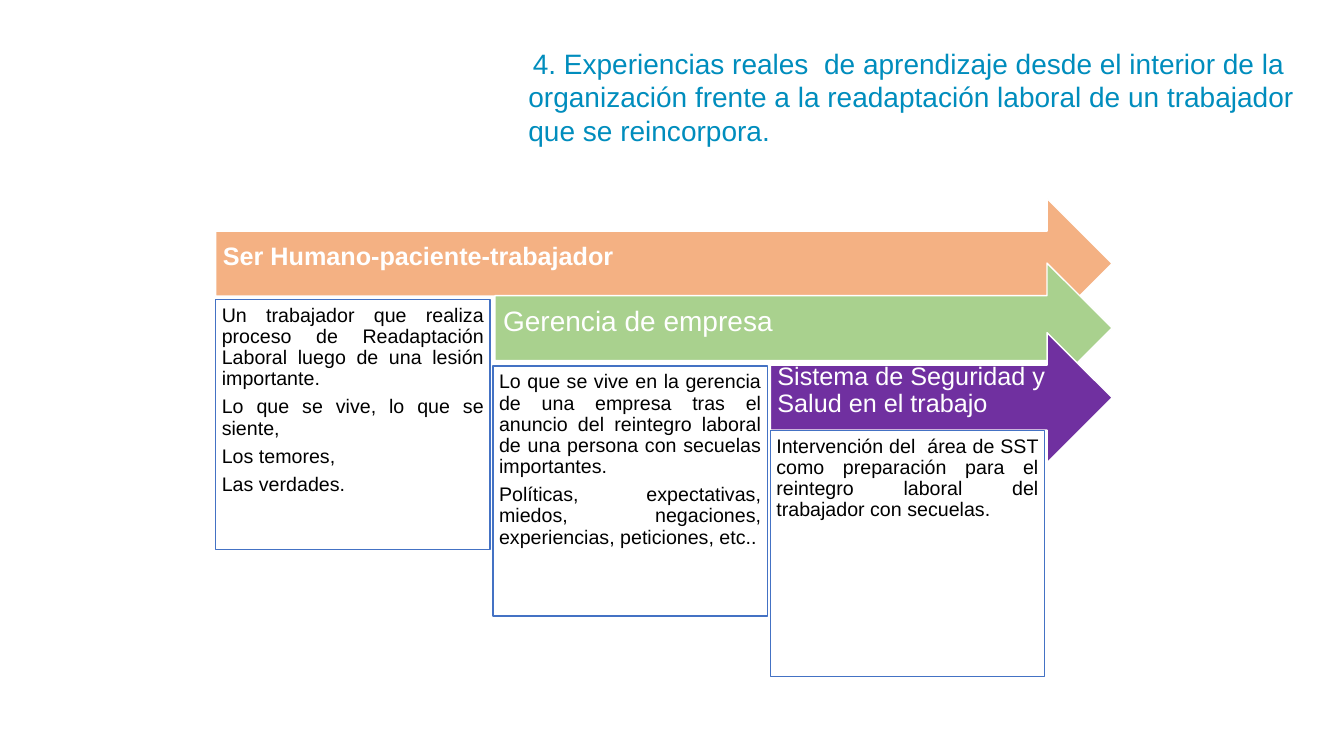
from pptx import Presentation
from pptx.dml.color import RGBColor
from pptx.enum.shapes import MSO_SHAPE
from pptx.enum.text import MSO_ANCHOR, MSO_AUTO_SIZE, PP_ALIGN
from pptx.util import Inches, Pt

ARROW, RECT = MSO_SHAPE.RIGHT_ARROW, MSO_SHAPE.RECTANGLE
TOP, MIDDLE = MSO_ANCHOR.TOP, MSO_ANCHOR.MIDDLE
LEFT, JUSTIFY = PP_ALIGN.LEFT, PP_ALIGN.JUSTIFY
GROW = MSO_AUTO_SIZE.SHAPE_TO_FIT_TEXT

TITLE = ("4. Experiencias reales  de aprendizaje desde el interior de la "
         "organización frente a la readaptación laboral de un trabajador "
         "que se reincorpora.")
TIP = 11.03

STAGES = [
    dict(head="Ser Humano-paciente-trabajador", size=18, bold=True,
         fill="F4B183", arrow=(2.14, 1.97), box=(2.14, 2.97, 2.72, 2.48), pad=0.07,
         body=["Un trabajador que realiza proceso de Readaptación Laboral "
               "luego de una lesión importante.",
               "Lo que se vive, lo que se siente,",
               "Los temores,",
               "Las verdades."]),
    dict(head="Gerencia de empresa", size=20, bold=False,
         fill="A9D18E", arrow=(4.91, 2.61), box=(4.89, 3.63, 2.72, 2.48), pad=0.08,
         body=["Lo que se vive en la gerencia de una empresa tras el anuncio "
               "del reintegro laboral de una persona con secuelas importantes.",
               "Políticas, expectativas, miedos, negaciones, experiencias, "
               "peticiones, etc.."]),
    dict(head="Sistema de Seguridad y Salud en el trabajo", size=18, bold=False,
         fill="7030A0", arrow=(7.64, 3.3), box=(7.64, 4.27, 2.72, 2.44), pad=0.07,
         body=["Intervención del  área de SST como preparación para el "
               "reintegro laboral del trabajador con secuelas."]),
]


def color(code):
    return RGBColor.from_string(code)


def write(para, text, size=14, font="Arial", ink="000000", bold=False,
          align=LEFT, lines=0.9, after=0.35):
    para.alignment = align
    para.line_spacing = lines
    para.space_before = Pt(0)
    para.space_after = Pt(size * after)
    run = para.add_run()
    run.text = text
    run.font.size = Pt(size)
    run.font.name = font
    run.font.bold = bold
    run.font.color.rgb = color(ink)


class Deck:
    line = "4472C4"
    white = "FFFFFF"
    accent = "008DBD"

    def __init__(self):
        self.file = Presentation()
        self.file.slide_width = Inches(13.33)
        self.file.slide_height = Inches(7.5)
        self.slide = self.file.slides.add_slide(self.file.slide_layouts[5])

    def frame(self, shape, pads, anchor):
        frame = shape.text_frame
        frame.word_wrap = True
        frame.vertical_anchor = anchor
        (frame.margin_left, frame.margin_top,
         frame.margin_right, frame.margin_bottom) = map(Inches, pads)
        return frame

    def title(self, text, left, top, width, height):
        shape = self.slide.shapes.title
        shape.left, shape.top = Inches(left), Inches(top)
        shape.width, shape.height = Inches(width), Inches(height)
        frame = self.frame(shape, (0.1, 0.05, 0.1, 0.05), TOP)
        frame.auto_size = GROW
        para = frame.paragraphs[0]
        write(para, " ", font="Calibri", lines=1.0, after=0)
        write(para, text, size=20, ink=self.accent, lines=1.0, after=0)

    def shape(self, kind, place, fill, line):
        shape = self.slide.shapes.add_shape(kind, *map(Inches, place))
        shape.shadow.inherit = False
        shape.fill.solid()
        shape.fill.fore_color.rgb = color(fill)
        shape.line.color.rgb = color(line)
        shape.line.width = Pt(1)
        return shape

    def arrow(self, text, left, top, fill, pad, **style):
        place = (left, top, TIP - left, 1.29)
        shape = self.shape(ARROW, place, fill, self.white)
        frame = self.frame(shape, (pad, pad, 0.28, 0.2), MIDDLE)
        write(frame.paragraphs[0], text, ink=self.white, **style)

    def box(self, texts, place):
        shape = self.shape(RECT, place, self.white, self.line)
        frame = self.frame(shape, [0.06] * 4, TOP)
        for num, text in enumerate(texts):
            para = frame.add_paragraph() if num else frame.paragraphs[0]
            write(para, text, align=JUSTIFY)


def main():
    deck = Deck()
    deck.title(TITLE, 5.14, 0.41, 8.05, 1.11)
    for stage in STAGES:
        deck.arrow(stage["head"], *stage["arrow"], stage["fill"], stage["pad"],
                   size=stage["size"], bold=stage["bold"])
        deck.box(stage["body"], stage["box"])
    deck.file.save("out.pptx")


if __name__ == "__main__":
    main()
